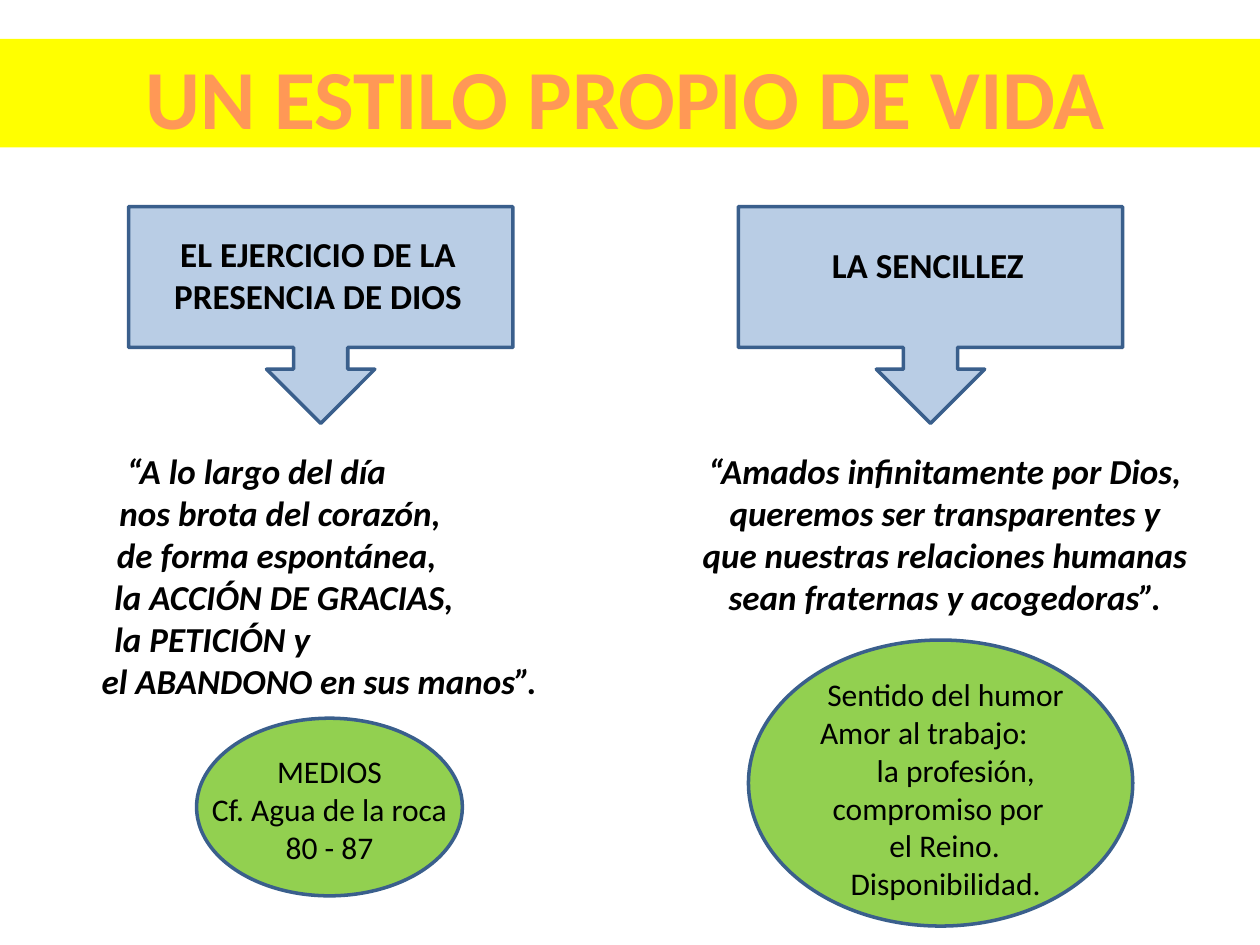
from dataclasses import dataclass
from typing import Optional

from pptx import Presentation
from pptx.dml.color import RGBColor
from pptx.enum.shapes import MSO_SHAPE
from pptx.enum.text import MSO_ANCHOR, MSO_AUTO_SIZE, PP_ALIGN
from pptx.util import Inches, Pt

RECTANGLE = MSO_SHAPE.RECTANGLE
OVAL = MSO_SHAPE.OVAL
CALLOUT = MSO_SHAPE.DOWN_ARROW_CALLOUT
CENTER, LEFT = PP_ALIGN.CENTER, PP_ALIGN.LEFT
TOP = MSO_ANCHOR.TOP
NO_AUTOFIT = MSO_AUTO_SIZE.NONE

FONT = "Calibri"
COLORS = {
    "band": "FFFF00",
    "title": "FF9856",
    "callout": "B9CDE5",
    "oval": "92D050",
    "outline": "3A5F8C",
    "text": "000000",
}


@dataclass
class Box:
    left: float
    top: float
    width: float
    height: float

    def lengths(self) -> tuple:
        return tuple(map(Inches, (self.left, self.top, self.width, self.height)))


@dataclass
class Panel:
    kind: int
    box: Box
    fill: str
    outline: Optional[str] = "outline"


@dataclass
class Line:
    text: str
    indent: Optional[float] = None  # inches; centred when absent


@dataclass
class TextBlock:
    box: Box
    lines: list
    size: int = 20
    bold: bool = True
    italic: bool = False


def color(name: str) -> RGBColor:
    return RGBColor.from_string(COLORS[name])


def draw_panel(slide, panel: Panel):
    shape = slide.shapes.add_shape(panel.kind, *panel.box.lengths())
    shape.shadow.inherit = False
    shape.fill.solid()
    shape.fill.fore_color.rgb = color(panel.fill)
    if panel.outline:
        shape.line.color.rgb = color(panel.outline)
        shape.line.width = Pt(2)
    else:
        shape.line.fill.background()
    return shape


def format_paragraph(paragraph, size: int, color_name: str, bold: bool, italic: bool) -> None:
    font = paragraph.font
    font.name, font.size = FONT, Pt(size)
    font.bold, font.italic = bold, italic
    font.color.rgb = color(color_name)


def draw_text(slide, block: TextBlock) -> None:
    frame = slide.shapes.add_textbox(*block.box.lengths()).text_frame
    frame.word_wrap = True
    for index, line in enumerate(block.lines):
        paragraph = frame.add_paragraph() if index else frame.paragraphs[0]
        paragraph.text = line.text
        paragraph.alignment = CENTER if line.indent is None else LEFT
        format_paragraph(paragraph, block.size, "text", block.bold, block.italic)
        if line.indent:
            properties = paragraph._p.get_or_add_pPr()
            properties.set("marL", str(Inches(line.indent)))
            properties.set("indent", "0")


def draw_title(slide, band) -> None:
    title = slide.shapes.title
    title.left, title.top, title.width, title.height = Box(1.02, 0.31, 7.89, 0.91).lengths()
    frame = title.text_frame
    frame.text = "UN ESTILO PROPIO DE VIDA"
    frame.word_wrap = False
    frame.auto_size = NO_AUTOFIT
    frame.vertical_anchor = TOP
    frame.paragraphs[0].alignment = CENTER
    format_paragraph(frame.paragraphs[0], 48, "title", True, False)
    band.element.addnext(title.element)  # title in front of its band


BAND = Panel(RECTANGLE, Box(0, 0.31, 10, 0.86), "band", None)

PANELS = [
    Panel(OVAL, Box(5.94, 5.08, 3.05, 2.27), "oval"),
    Panel(OVAL, Box(1.56, 5.7, 2.11, 1.41), "oval"),
    *(Panel(CALLOUT, Box(left, 1.64, 3.05, 1.72), "callout") for left in (1.02, 5.86)),
]

TEXTS = [
    # Callout headings
    TextBlock(Box(1.08, 1.8, 2.89, 0.77),
              [Line("EL EJERCICIO DE LA"), Line("PRESENCIA DE DIOS")]),
    TextBlock(Box(5.96, 1.88, 2.81, 0.44), [Line("LA SENCILLEZ")]),
    # Quotations; the left box leaves room for its longest line
    TextBlock(Box(0.6, 3.52, 3.87, 2.12), [
        Line("“A lo largo del día", 0.31),
        Line("nos brota del corazón,", 0.25),
        Line("de forma espontánea,", 0.23),
        Line("la ACCIÓN DE GRACIAS,", 0.21),
        Line("la PETICIÓN y", 0.21),
        Line("el ABANDONO en sus manos”."),
    ], italic=True),
    TextBlock(Box(5.47, 3.52, 4.06, 1.45), [
        Line("“Amados infinitamente por Dios, queremos ser transparentes y "
             "que nuestras relaciones humanas sean fraternas y acogedoras”."),
    ], italic=True),
    # Oval texts
    TextBlock(Box(1.56, 5.92, 2.11, 1.01),
              [Line("MEDIOS"), Line("Cf. Agua de la roca"), Line("80 - 87")],
              size=18, bold=False),
    TextBlock(Box(6.41, 5.31, 2.19, 1.92), [
        Line("Sentido del humor"),
        Line("Amor al trabajo:", 0),
        Line("la profesión,", 0.45),
        Line("compromiso por", 0.1),
        Line("el Reino.", 0.55),
        Line("Disponibilidad."),
    ], size=18, bold=False),
]


def main() -> None:
    presentation = Presentation()
    presentation.slide_width, presentation.slide_height = Inches(10), Inches(7.5)
    slide = presentation.slides.add_slide(presentation.slide_layouts.get_by_name("Title Only"))

    draw_title(slide, draw_panel(slide, BAND))
    for panel in PANELS:
        draw_panel(slide, panel)
    for block in TEXTS:
        draw_text(slide, block)

    presentation.save("out.pptx")


if __name__ == "__main__":
    main()
